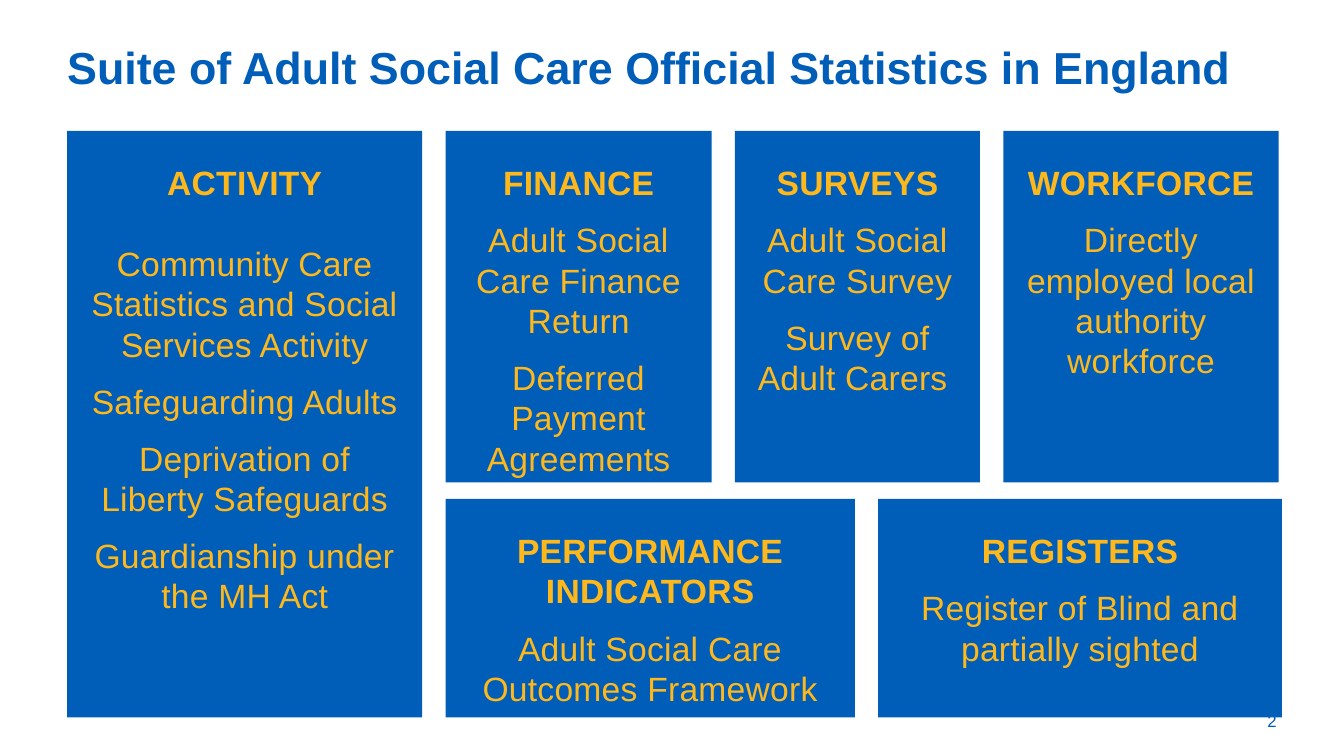
from pptx import Presentation
from pptx.dml.color import RGBColor
from pptx.enum.shapes import MSO_SHAPE
from pptx.enum.text import MSO_ANCHOR, MSO_AUTO_SIZE, PP_ALIGN
from pptx.oxml.ns import qn
from pptx.util import Pt

RECTANGLE = MSO_SHAPE.RECTANGLE
TOP, MIDDLE = MSO_ANCHOR.TOP, MSO_ANCHOR.MIDDLE
LEFT, CENTER, RIGHT = PP_ALIGN.LEFT, PP_ALIGN.CENTER, PP_ALIGN.RIGHT
NO_AUTOFIT = MSO_AUTO_SIZE.NONE
TWO_CONTENT_LAYOUT = 3


def colour(value):
    """Turn a hex string into a colour."""
    return RGBColor.from_string(value)


class StatisticsPage:
    """Hold the style and the current slide."""

    font_name = "Arial"
    blue = "005EB8"
    yellow = "FFB81C"
    line_height = 28.8

    def __init__(self, deck):
        """Add a slide with a title and two body placeholders."""
        self.page = deck.slides.add_slide(deck.slide_layouts[TWO_CONTENT_LAYOUT])

    def place(self, box, left, top, width, height):
        """Move and size a box."""
        box.left, box.top = Pt(left), Pt(top)
        box.width, box.height = Pt(width), Pt(height)

    def frame(self, box, anchor, side=0, head=0):
        """Prepare the text area of a box."""
        frame = box.text_frame
        frame.word_wrap = True
        frame.auto_size = NO_AUTOFIT
        frame.vertical_anchor = anchor
        frame.margin_left = frame.margin_right = Pt(side)
        frame.margin_top, frame.margin_bottom = Pt(head), Pt(0)
        return frame

    def fill_paragraph(self, para, text, size, shade, align, bold=False):
        """Fill and format one paragraph."""
        para.text = text
        para.alignment = align
        para.space_before = Pt(0)
        font = para.font
        font.name, font.size, font.bold = self.font_name, Pt(size), bold
        font.color.rgb = colour(shade)

    def title(self, text):
        """Set the slide title."""
        box = self.page.shapes.title
        self.place(box, 48, 28, 864, 65)
        para = self.frame(box, TOP).paragraphs[0]
        self.fill_paragraph(para, text, 32, self.blue, LEFT, bold=True)

    def number(self, text):
        """Add the page number."""
        box = self.page.shapes.add_textbox(Pt(857), Pt(506), Pt(55), Pt(17.5))
        para = self.frame(box, MIDDLE).paragraphs[0]
        self.fill_paragraph(para, text, 12, self.blue, RIGHT)

    def body(self, index):
        """Return a body placeholder."""
        return self.page.placeholders[index]

    def rectangle(self):
        """Add a plain rectangle."""
        box = self.page.shapes.add_shape(RECTANGLE, 0, 0, 0, 0)
        box.shadow.inherit = False
        box.line.fill.background()
        return box

    def panel(self, box, bounds, heading, items, heading_gap=12):
        """Turn a box into a blue panel with a heading and a list."""
        self.place(box, *bounds)
        box.fill.solid()
        box.fill.fore_color.rgb = colour(self.blue)
        frame = self.frame(box, TOP, side=14.4, head=22.3)
        for position, text in enumerate([heading, *items]):
            is_heading = position == 0
            para = frame.paragraphs[0] if is_heading else frame.add_paragraph()
            para.line_spacing = Pt(self.line_height)
            para.space_after = Pt(heading_gap if is_heading else 12)
            para.space_before = Pt(0)
            properties = para._p.get_or_add_pPr()
            properties.set("marL", "0")
            properties.set("indent", "0")
            properties.append(properties.makeelement(qn("a:buNone"), {}))
            self.fill_paragraph(para, text, 24, self.yellow, CENTER, bold=is_heading)
            for span in para.runs:
                span._r.get_or_add_rPr().set("spc", "20")


def main():
    """Build and save the deck."""
    deck = Presentation()
    deck.slide_width, deck.slide_height = Pt(960), Pt(540)
    sheet = StatisticsPage(deck)
    sheet.title("Suite of Adult Social Care Official Statistics in England")

    gap = 16.7
    top, upper_height, full_height = 93.5, 251, 419
    lower_top, lower_height = 356.3, 156.2
    activity_width, finance_width, surveys_width = 253.6, 190, 175
    indicators_width = 292.3
    finance_left = 48 + activity_width + gap
    surveys_left = finance_left + finance_width + gap
    workforce_left = surveys_left + surveys_width + gap
    registers_left = finance_left + indicators_width + gap

    sheet.panel(sheet.body(1), (48, top, activity_width, full_height), "ACTIVITY", [
        "Community Care Statistics and Social Services Activity",
        "Safeguarding Adults",
        "Deprivation of Liberty Safeguards",
        "Guardianship under the MH Act",
    ], heading_gap=sheet.line_height)
    sheet.panel(sheet.body(2), (workforce_left, top, 196.7, upper_height),
                "WORKFORCE", ["Directly employed local authority workforce"])
    sheet.number("2")

    panels = [
        ((finance_left, top, finance_width, upper_height), "FINANCE",
         ["Adult Social Care Finance Return", "Deferred Payment Agreements"]),
        ((finance_left, lower_top, indicators_width, lower_height),
         "PERFORMANCE INDICATORS", ["Adult Social Care Outcomes Framework"]),
        ((surveys_left, top, surveys_width, upper_height), "SURVEYS",
         ["Adult Social Care Survey", "Survey of Adult Carers "]),
        ((registers_left, lower_top, 288.4, lower_height), "REGISTERS",
         ["Register of Blind and partially sighted"]),
    ]
    for bounds, heading, items in panels:
        sheet.panel(sheet.rectangle(), bounds, heading, items)
    deck.save("out.pptx")


if __name__ == "__main__":
    main()
